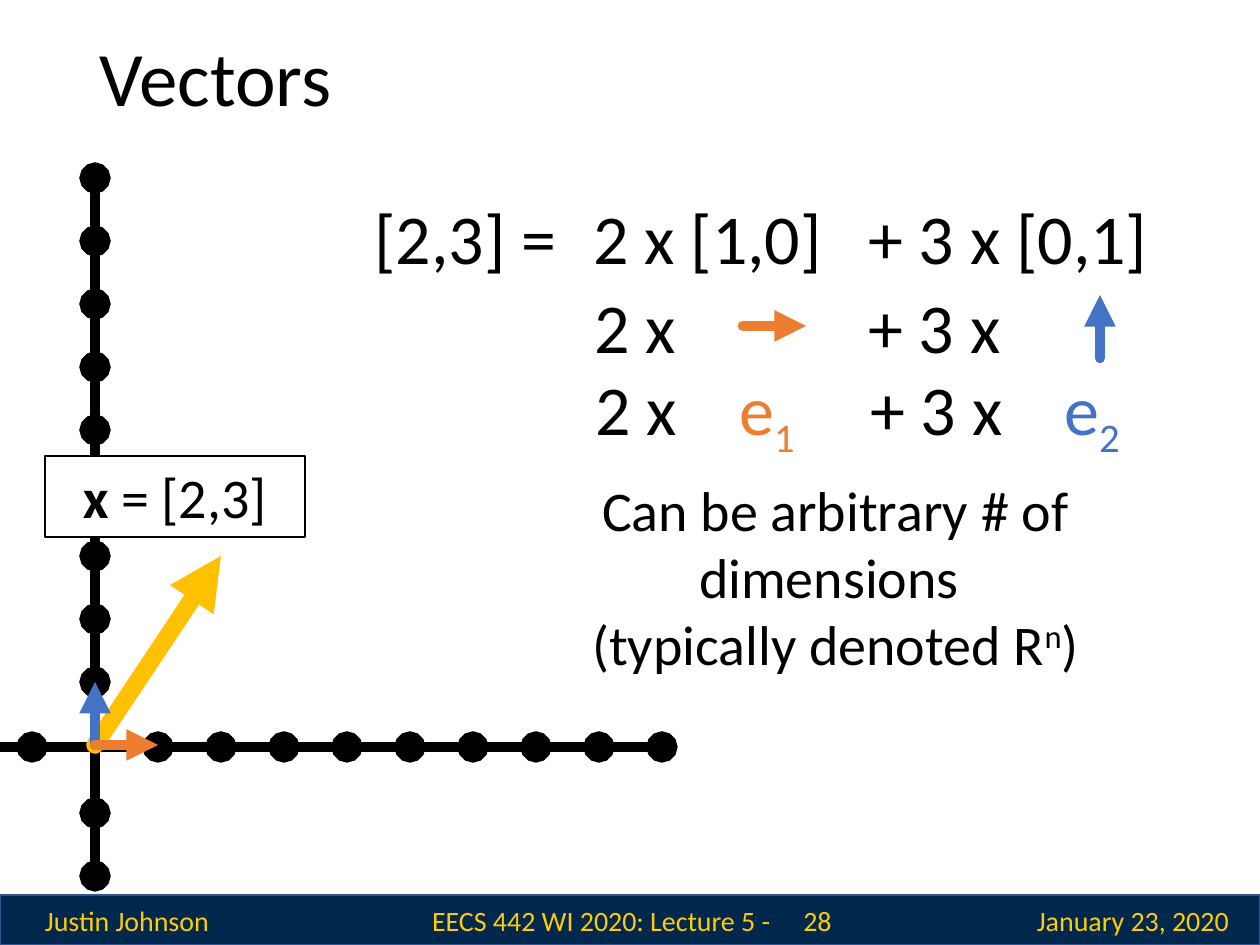
from lxml import etree
from pptx import Presentation
from pptx.dml.color import RGBColor
from pptx.enum.shapes import MSO_CONNECTOR, MSO_SHAPE
from pptx.enum.text import MSO_ANCHOR, PP_ALIGN
from pptx.oxml.ns import qn
from pptx.util import Pt

SCALE = 914400 // 126
LEFT, CENTER = PP_ALIGN.LEFT, PP_ALIGN.CENTER
TOP, MIDDLE = MSO_ANCHOR.TOP, MSO_ANCHOR.MIDDLE
RECT, STRAIGHT = MSO_SHAPE.RECTANGLE, MSO_CONNECTOR.STRAIGHT
COLORS = {
    "black": "000000", "white": "FFFFFF", "navy": "00274C", "edge": "325491",
    "maize": "FFCB05", "gold": "FFC000", "orange": "ED7D31", "blue": "4472C4",
}


def color(name):
    return RGBColor.from_string(COLORS[name])


class Deck:
    font = "Calibri"

    def __init__(self, wide, high):
        self.prs = Presentation()
        self.prs.slide_width = wide * SCALE
        self.prs.slide_height = high * SCALE
        self.slide = self.prs.slides.add_slide(self.prs.slide_layouts[5])
        self.shapes = self.slide.shapes

    def place(self, shape, box):
        shape.left, shape.top, shape.width, shape.height = [n * SCALE for n in box]

    def fill_text(self, shape, lines, size, ink="black", align=LEFT, anchor=TOP, wrap=True):
        frame = shape.text_frame
        frame.word_wrap = wrap
        frame.vertical_anchor = anchor
        for i, line in enumerate(lines):
            para = frame.add_paragraph() if i else frame.paragraphs[0]
            para.alignment = align
            para.font.name = self.font
            para.font.size = Pt(size)
            para.font.color.rgb = color(ink)
            for part in line:
                text, bold, shift = part if isinstance(part, tuple) else (part, False, 0)
                run = para.add_run()
                run.text = text
                if bold:
                    run.font.bold = True
                if shift:
                    run._r.get_or_add_rPr().set("baseline", str(shift * 1000))

    def title(self, text, box, size):
        shape = self.shapes.title
        self.place(shape, box)
        self.fill_text(shape, [[text]], size, anchor=MIDDLE)
        shape.text_frame.paragraphs[0].line_spacing = 0.9

    def text(self, box, lines, size, **style):
        shape = self.shapes.add_textbox(*[n * SCALE for n in box])
        self.fill_text(shape, lines, size, **style)

    def rect(self, box, fill, edge, width):
        shape = self.shapes.add_shape(RECT, *[n * SCALE for n in box])
        shape.shadow.inherit = False
        shape.fill.solid()
        shape.fill.fore_color.rgb = color(fill)
        shape.line.color.rgb = color(edge)
        shape.line.width = Pt(width)
        return shape

    def line(self, start, end, ink, width=6, tip="triangle"):
        line = self.shapes.add_connector(STRAIGHT, *[n * SCALE for n in (*start, *end)])
        line.line.color.rgb = color(ink)
        line.line.width = Pt(width)
        props = line._element.spPr
        stroke = props.get_or_add_ln()
        if tip == "triangle":
            stroke.set("cap", "rnd")
        etree.SubElement(stroke, qn("a:tailEnd"), type=tip)
        etree.SubElement(props, qn("a:effectLst"))

    def save(self):
        self.prs.save("out.pptx")


deck = Deck(1260, 945)
deck.rect((0, 895, 1260, 50), "navy", "edge", 1)
for left, wide, note in (
    (1, 252, "Justin Johnson"),
    (1007, 252, "January 23, 2020"),
    (416, 377, "EECS 442 WI 2020: Lecture 5 - "),
    (762, 111, "28"),
):
    deck.text((left, 895, wide, 50), [[note]], 16, ink="maize", align=CENTER, anchor=MIDDLE)
deck.title("Vectors", (87, 25, 1086, 113), 44)

STEP = 63
X, Y = 95, 745
for dx, dy, base, count in ((0, 1, 750, 2), (-1, 0, 747, 2), (0, -1, Y, 9), (1, 0, 747, 9)):
    for i in range(1, count + 1):
        tick = (X + dx * i * STEP, base + dy * i * STEP)
        deck.line((X, base), tick, "black", tip="oval")
deck.line((X, Y), (X + 2 * STEP, Y - 3 * STEP), "gold", width=10)

deck.text((362, 188, 237, 97), [["[2,3] ="]], 40)
for top, left, first, right, second in (
    (188, 581, "2 x [1,0]", 856, "+ 3 x [0,1]"),
    (277, 582, "2 x", 856, "+ 3 x"),
    (359, 583, "2 x", 858, "+ 3 x"),
):
    deck.text((left, top, 277, 97), [[first]], 40, wrap=False)
    deck.text((right, top, 338, 97), [[second]], 40, wrap=False)

deck.line((743, 326), (743 + STEP, 326), "orange")
deck.line((1100, 358), (1100, 358 - STEP), "blue")
for left, index, ink in ((727, "1", "orange"), (1052, "2", "blue")):
    deck.text((left, 359, 96, 97), [["e", (index, False, -25)]], 40, ink=ink)

deck.line((X, Y), (X, Y - STEP), "blue")
deck.line((X, Y), (X + STEP, Y), "orange")

label = deck.rect((45, 456, 260, 81), "white", "black", 0.75)
deck.fill_text(label, [[("x", True, 0), " = [2,3]"]], 32, align=CENTER)
deck.text(
    (557, 469, 557, 217),
    [["Can be arbitrary # of dimensions "], ["(typically denoted R", ("n", False, 30), ")"]],
    32, align=CENTER,
)
deck.save()
